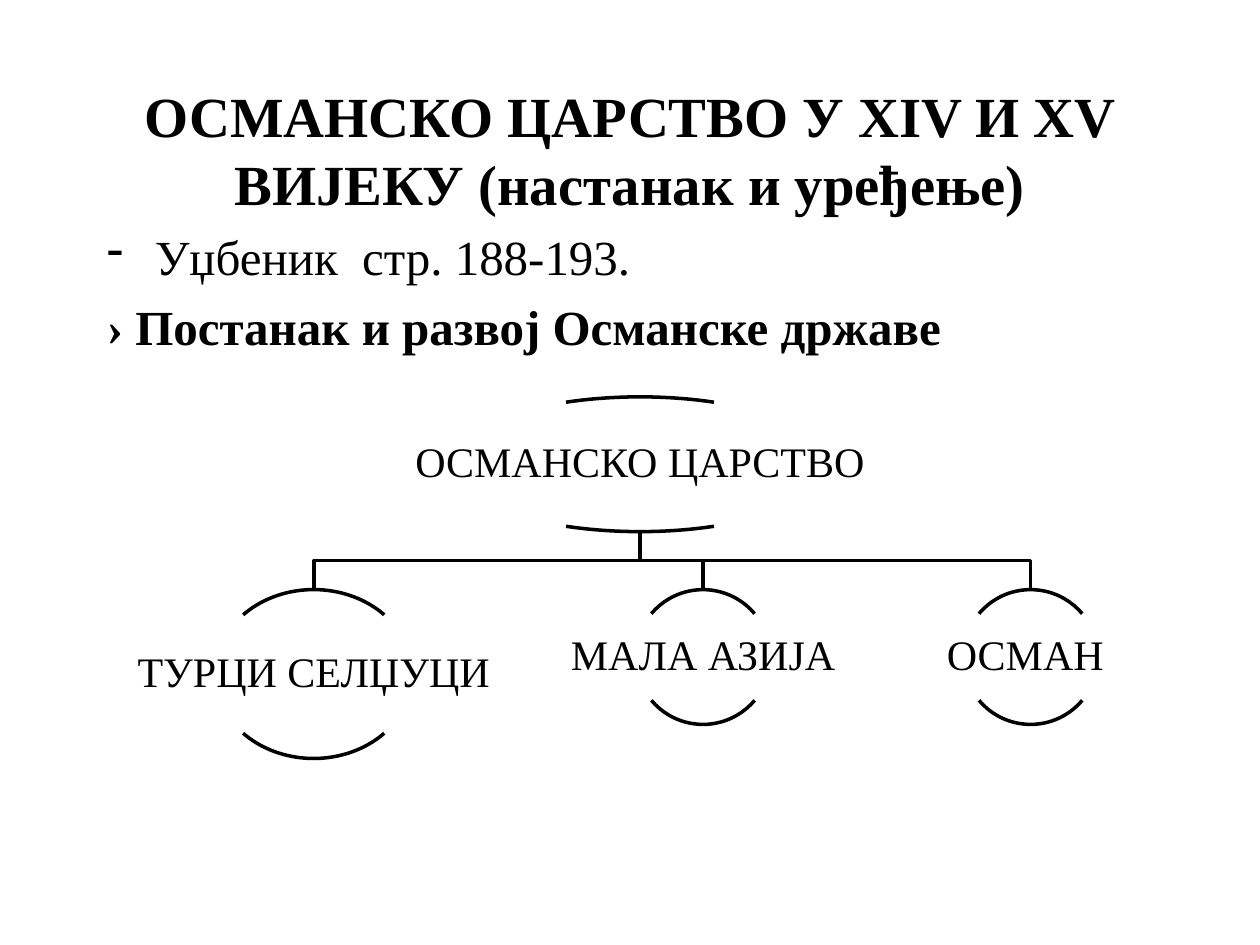
import pptx
import pptx.dml.color
import pptx.enum.shapes
import pptx.enum.text
import pptx.oxml
import pptx.oxml.ns
import pptx.util

Inches = pptx.util.Inches
Pt = pptx.util.Pt
ALIGN = pptx.enum.text.PP_ALIGN
ANCHOR = pptx.enum.text.MSO_ANCHOR

FONT = "Times New Roman"
INK = "000000"
ROW_TOPS = (3.15, 4.68)
NODE_HEIGHT = 1.07
ARC_ANGLES = ((220, 320), (40, 140))
# label, centre x, ellipse width, ellipse height
ROOT = ("ОСМАНСКО ЦАРСТВО", 5.08, 3, NODE_HEIGHT)
CHILDREN = (
    ("ТУРЦИ СЕЛЏУЦИ", 2.49, 1.57, 1.34),
    ("МАЛА АЗИЈА", 5.58, NODE_HEIGHT, NODE_HEIGHT),
    ("ОСМАН ", 8.18, NODE_HEIGHT, NODE_HEIGHT),
)


def color(hex_string):
    return pptx.dml.color.RGBColor.from_string(hex_string)


def add_run(paragraph, text, size, bold=False):
    run = paragraph.add_run()
    run.text = text
    run.font.name = FONT
    run.font.size = Pt(size)
    run.font.bold = bold
    run.font.color.rgb = color(INK)


def add_text_box(slide, left, top, width, height):
    frame = slide.shapes.add_textbox(*map(Inches, (left, top, width, height))).text_frame
    frame.word_wrap = True
    return frame


def set_outline(shape):
    """Leave only a plain 2 pt line on the shape."""
    shape.shadow.inherit = False
    shape.fill.background()
    shape.line.color.rgb = color(INK)
    shape.line.width = Pt(2)


def add_title(slide, text):
    title = slide.shapes.title
    title.left, title.top, title.width, title.height = map(Inches, (0.5, 0.3, 9, 1.42))
    frame = title.text_frame
    frame.word_wrap = True
    frame.auto_size = pptx.enum.text.MSO_AUTO_SIZE.NONE
    frame.vertical_anchor = ANCHOR.BOTTOM
    frame.margin_bottom = 0
    paragraph = frame.paragraphs[0]
    paragraph.alignment = ALIGN.CENTER
    add_run(paragraph, text, 32.4, bold=True)


def set_hanging_indent(paragraph, bullet=None):
    properties = paragraph._p.get_or_add_pPr()
    properties.set("marL", str(Inches(0.38)))
    properties.set("indent", str(Inches(-0.38)))
    if bullet:
        element = pptx.oxml.parse_xml(
            f'<a:buChar {pptx.oxml.ns.nsdecls("a")} char="{bullet}"/>')
        properties.append(element)


def add_body(slide):
    frame = add_text_box(slide, 0.75, 1.75, 8.58, 1.2)
    frame.margin_top = Inches(0.05)
    reference = frame.paragraphs[0]
    set_hanging_indent(reference, bullet="-")
    add_run(reference, "Уџбеник  стр. 188-193.", 28)
    heading = frame.add_paragraph()
    set_hanging_indent(heading)
    heading.space_before = Pt(6)
    add_run(heading, "› Постанак и развој Османске државе", 28, bold=True)
    for paragraph in frame.paragraphs:
        paragraph.alignment = ALIGN.JUSTIFY


def add_branch(slide, start_x, end_x):
    """Draw an elbow line from the root's lower arc to a child's upper arc."""
    start_y, end_y = ROW_TOPS[0] + NODE_HEIGHT, ROW_TOPS[1]
    middle_y = (start_y + end_y) / 2
    corners = ((start_x, start_y), (start_x, middle_y), (end_x, middle_y), (end_x, end_y))
    points = [(Inches(x), Inches(y)) for x, y in corners]
    builder = slide.shapes.build_freeform(*points[0])
    builder.add_line_segments(points[1:], close=False)
    set_outline(builder.convert_to_shape())


def add_node(slide, top, label, center, width, height):
    """Add a label between an upper and a lower arc of one ellipse."""
    for angles in ARC_ANGLES:
        arc = slide.shapes.add_shape(
            pptx.enum.shapes.MSO_SHAPE.ARC,
            *map(Inches, (center - width / 2, top, width, height)))
        for index, angle in enumerate(angles):
            arc.adjustments[index] = angle * 0.6
        set_outline(arc)
    frame = add_text_box(
        slide, center - width, top + 0.18 * height, 2 * width, 0.64 * height)
    frame.vertical_anchor = ANCHOR.MIDDLE
    frame.margin_left = frame.margin_right = Inches(0.02)
    frame.margin_top = frame.margin_bottom = Inches(0.02)
    paragraph = frame.paragraphs[0]
    paragraph.alignment = ALIGN.CENTER
    paragraph.line_spacing = 0.9
    add_run(paragraph, label, 24)


def main():
    presentation = pptx.Presentation()
    presentation.slide_width = Inches(10)
    presentation.slide_height = Inches(7.5)
    slide = presentation.slides.add_slide(presentation.slide_layouts[5])
    add_title(slide, "ОСМАНСКО ЦАРСТВО У XIV И XV ВИЈЕКУ (настанак и уређење)")
    add_body(slide)
    for child in reversed(CHILDREN):
        add_branch(slide, ROOT[1], child[1])
    add_node(slide, ROW_TOPS[0], *ROOT)
    for child in CHILDREN:
        add_node(slide, ROW_TOPS[1], *child)
    presentation.save("out.pptx")


if __name__ == "__main__":
    main()
